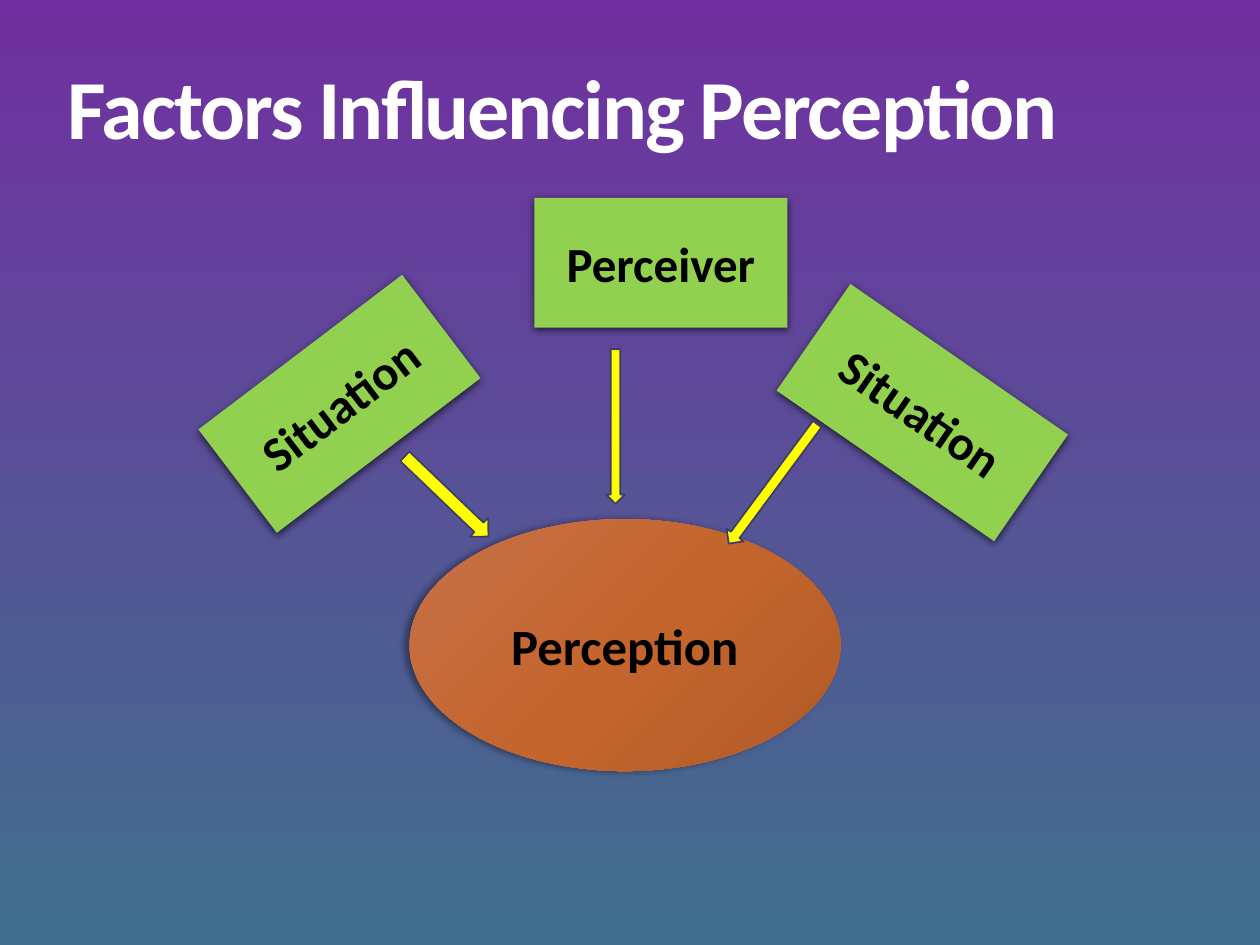
from copy import deepcopy

from lxml.etree import SubElement
from pptx import Presentation
from pptx.dml.color import RGBColor
from pptx.enum.shapes import MSO_SHAPE
from pptx.enum.text import MSO_ANCHOR, PP_ALIGN
from pptx.oxml.ns import qn
from pptx.util import Inches, Pt


def color(value):
    return RGBColor.from_string(value)


def set_gradient(fill, stops, angle):
    fill.gradient()
    fill.gradient_angle = 360 - angle
    first = fill.gradient_stops[0]._gs
    for _ in stops[2:]:
        first.addnext(deepcopy(first))
    for stop, (position, value) in zip(fill.gradient_stops, stops):
        stop.position = position
        stop.color.rgb = color(value)


def add_shadow(shape, opacity, blur, distance, angle):
    effects = shape._element.spPr.find(qn("a:effectLst"))
    shadow = SubElement(
        effects, qn("a:outerShdw"), blurRad=str(Pt(blur)), dist=str(Pt(distance)),
        dir=str(angle * 60000), algn="ctr", rotWithShape="0",
    )
    tone = SubElement(shadow, qn("a:srgbClr"), val="000000")
    SubElement(tone, qn("a:alpha"), val=str(opacity * 1000))


def write_text(shape, text, size=28, ink="000000", align=PP_ALIGN.CENTER, line=None, tracking=None):
    frame = shape.text_frame
    frame.word_wrap = True
    frame.vertical_anchor = MSO_ANCHOR.MIDDLE
    para = frame.paragraphs[0]
    para.alignment = align
    para.line_spacing = line
    span = para.add_run()
    span.text = text
    span.font.name = "Calibri"
    span.font.size = Pt(size)
    span.font.bold = True
    span.font.color.rgb = color(ink)
    if tracking is not None:
        span.font._element.set("spc", str(round(tracking * 100)))


def add_part(page, kind, box, place, rotation=0, fill=None):
    left, top, width, height = place
    shape = page.shapes.add_shape(
        kind, Inches(box[0] + left), Inches(box[1] + top), Inches(width), Inches(height)
    )
    shape.rotation = rotation
    shape.shadow.inherit = False
    shape.line.fill.background()
    if fill:
        shape.fill.solid()
        shape.fill.fore_color.rgb = color(fill)
    return shape


def add_title(page, box):
    title = page.shapes.add_textbox(*map(Inches, box))
    write_text(title, "Factors Influencing Perception", size=48, ink="FFFFFF",
               align=PP_ALIGN.LEFT, line=0.85, tracking=-1.2)


def add_diagram(page, box):
    perception = add_part(page, MSO_SHAPE.OVAL, box, (1.57, 2.55, 3.42, 2))
    set_gradient(perception.fill, [(0, "C77148"), (0.5, "C4652D"), (1, "B05B28")], 45)
    add_shadow(perception, 40, 4, 3, 180)
    write_text(perception, "Perception", size=29)

    factors = [
        ("Situation", (0, 1.12, 2.03, 1.03), 322.8),
        ("Perceiver", (2.56, 0, 2.01, 1.03), 0),
        ("Situation", (4.59, 1.19, 2.1, 1.03), 34.7),
    ]
    for name, place, rotation in factors:
        factor = add_part(page, MSO_SHAPE.RECTANGLE, box, place, rotation, "92D050")
        add_shadow(factor, 63, 4.5, 1.5, 90)
        write_text(factor, name)

    arrows = [
        ((3.13, 1.2, 0.15, 1.23), 0),
        ((1.76, 1.91, 0.21, 0.92), 313.8),
        ((4.37, 1.68, 0.17, 1.18), 36.5),
    ]
    for place, rotation in arrows:
        arrow = add_part(page, MSO_SHAPE.DOWN_ARROW, box, place, rotation, "FFFF00")
        arrow.line.color.rgb = color("3D3E66")
        arrow.line.width = Pt(1)


def main():
    deck = Presentation()
    deck.slide_width = Inches(10)
    deck.slide_height = Inches(7.5)
    page = deck.slides.add_slide(deck.slide_layouts[6])
    set_gradient(page.background.fill, [(0, "7030A0"), (1, "406F8D")], 90)
    add_title(page, (0.44, 0, 8.84, 1.81))
    add_diagram(page, (1.68, 1.57))
    deck.save("out.pptx")


if __name__ == "__main__":
    main()
